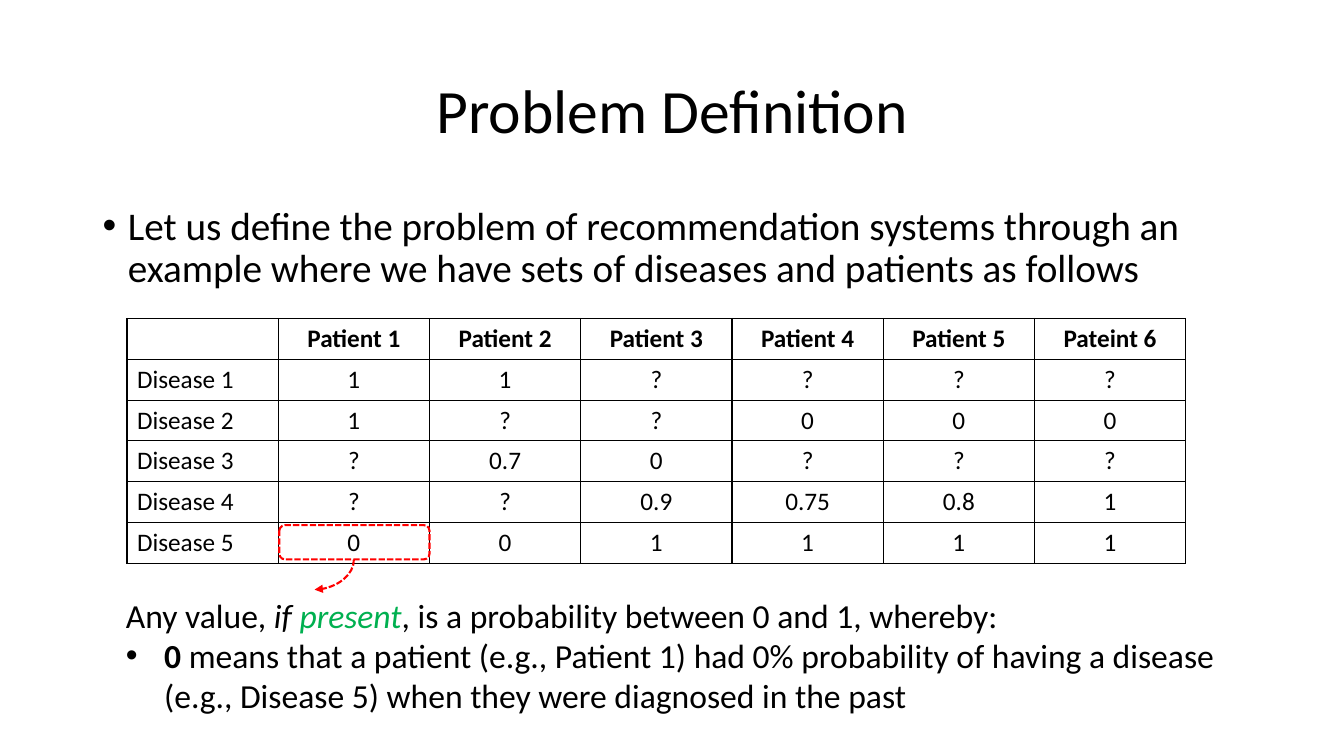
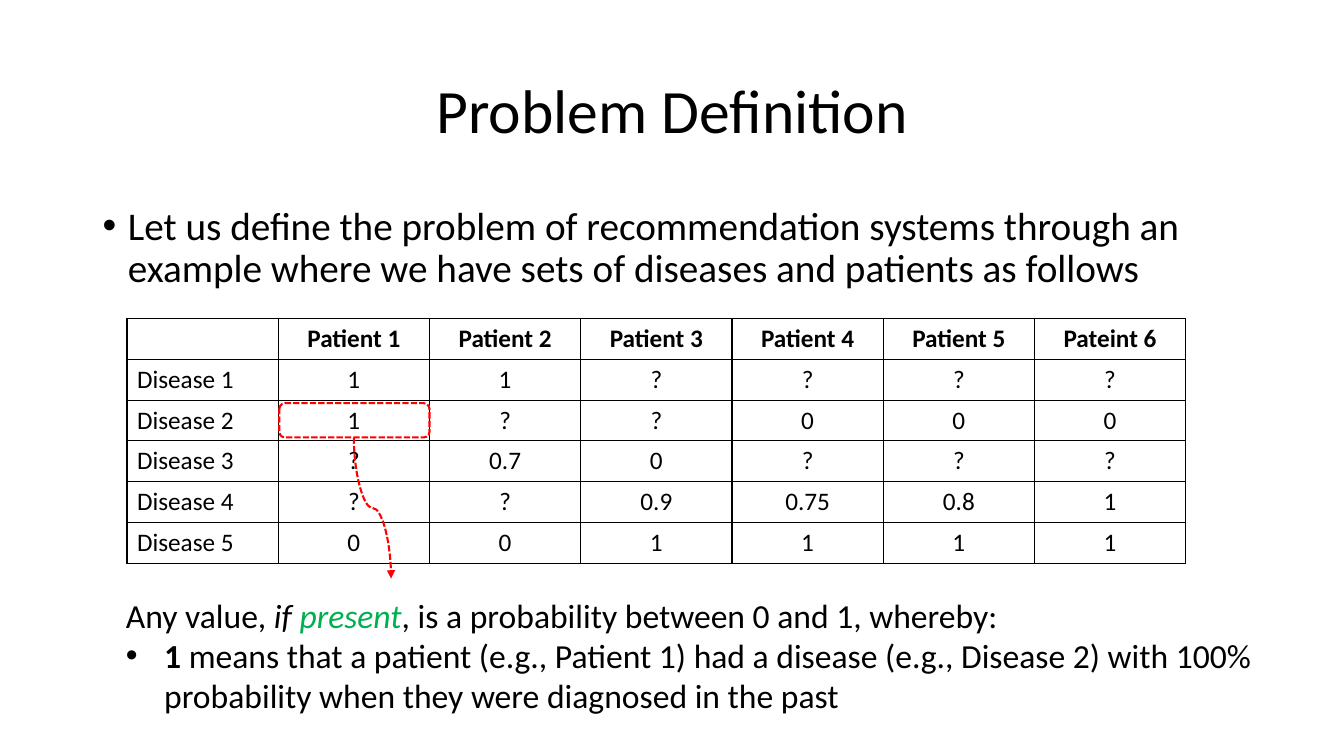
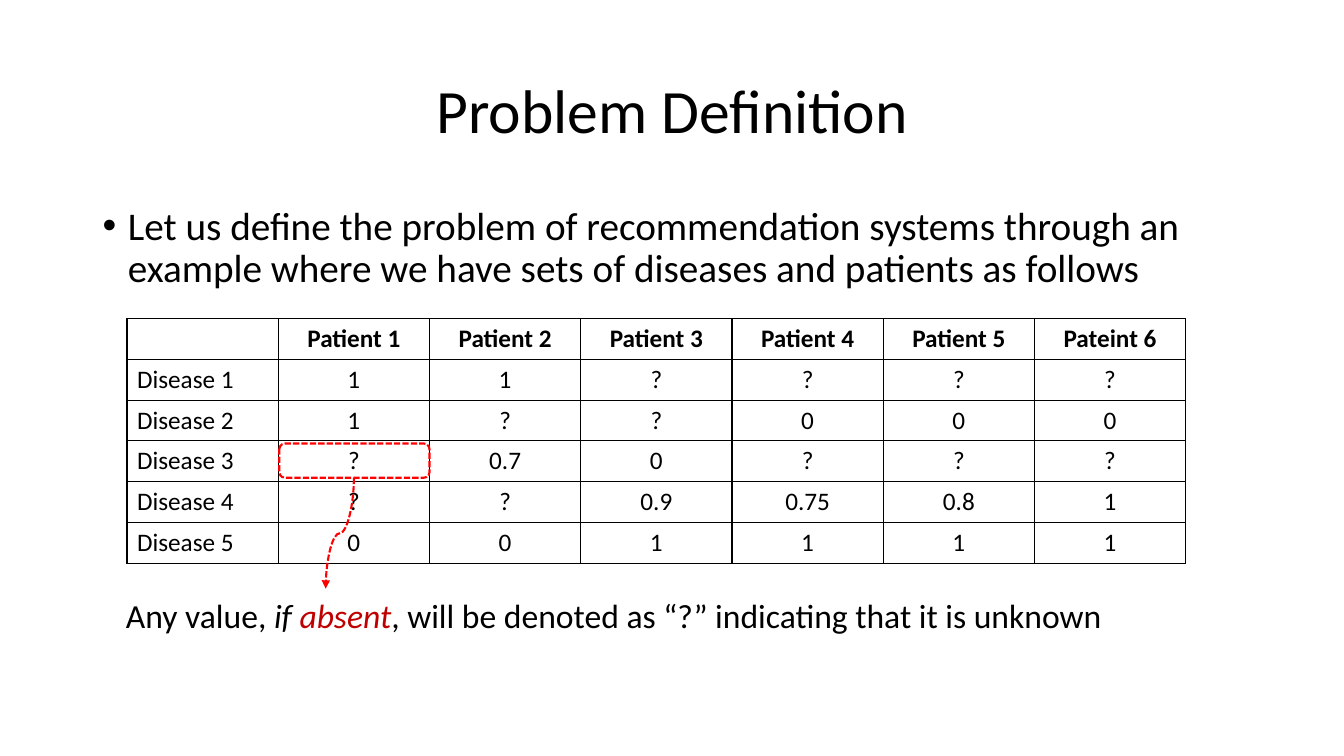
import pptx
import pptx.dml.color
import pptx.enum.dml
import pptx.enum.shapes
import pptx.enum.text
import pptx.oxml.ns
import pptx.util
from lxml import etree

SCALE = 9144
FONT = "Calibri"
COLORS = {"text": "000000", "present": "00B050", "absent": "C00000", "mark": "FF0000"}
TABLE_BOX = (126, 316, 1050, 243)
GRID = [
    ["", "Patient 1", "Patient 2", "Patient 3", "Patient 4", "Patient 5", "Pateint 6"],
    ["Disease 1", "1", "1", "?", "?", "?", "?"],
    ["Disease 2", "1", "?", "?", "0", "0", "0"],
    ["Disease 3", "?", "0.7", "0", "?", "?", "?"],
    ["Disease 4", "?", "?", "0.9", "0.75", "0.8", "1"],
    ["Disease 5", "0", "0", "1", "1", "1", "1"],
]
TITLE = "Problem Definition"
INTRO = ("Let us define the problem of recommendation systems through an example "
         "where we have sets of diseases and patients as follows")
PRESENT = [("Any value, ", {}), ("if ", {"italic": True}),
           ("present", {"italic": True, "color": "present"}),
           (", is a probability between 0 and 1, whereby:", {})]
ABSENT = [("Any value, ", {}), ("if ", {"italic": True}),
          ("absent", {"italic": True, "color": "absent"}),
          (", will be denoted as “?” indicating that it is unknown", {})]
ZERO = [("0", {"bold": True}),
        (" means that a patient (e.g., Patient 1) had 0% probability of having a disease "
         "\v(e.g., Disease 5) when they were diagnosed in the past", {})]
ONE = [("1", {"bold": True}),
       (" means that a patient (e.g., Patient 1) had a disease (e.g., Disease 2) with 100% "
        "\vprobability when they were diagnosed in the past", {})]
SLIDES = [
    {"row": 5, "tip": (312, 585), "bends": 2, "note": (115, 585, 1117, 131), "lines": [PRESENT, ZERO]},
    {"row": 2, "tip": (388, 574), "bends": 3, "note": (115, 585, 1154, 131), "lines": [PRESENT, ONE]},
    {"row": 3, "tip": (323, 584), "bends": 3, "note": (115, 585, 1005, 50), "lines": [ABSENT]},
]


def px(n):
    """Turn px into EMU."""
    return pptx.util.Emu(int(n * SCALE))


def rgb(name):
    """Look up a named colour."""
    return pptx.dml.color.RGBColor.from_string(COLORS[name])


def add(parent, tag, **attrs):
    """Append a DrawingML element."""
    return etree.SubElement(parent, pptx.oxml.ns.qn(tag), attrs)


def style(p, size, bold=None, center=False):
    """Set the font and alignment of a paragraph."""
    p.font.name = FONT
    p.font.size = pptx.util.Pt(size)
    p.font.bold = bold
    p.font.color.rgb = rgb("text")
    if center:
        p.alignment = pptx.enum.text.PP_ALIGN.CENTER


def bullet(p, indent):
    """Give a paragraph a hanging bullet."""
    pPr = p._p.get_or_add_pPr()
    pPr.set("marL", str(px(indent)))
    pPr.set("indent", str(-px(indent)))
    add(pPr, "a:buFont", typeface="Arial")
    add(pPr, "a:buChar", char="•")


def text_box(slide, box, wrap=True):
    """Add an empty text box and return its text frame."""
    tf = slide.shapes.add_textbox(*map(px, box)).text_frame
    tf.word_wrap = wrap
    return tf


def add_title(slide, box):
    """Place the centred slide title."""
    tf = text_box(slide, box)
    tf.vertical_anchor = pptx.enum.text.MSO_ANCHOR.MIDDLE
    p = tf.paragraphs[0]
    p.text = TITLE
    p.line_spacing = 0.9
    style(p, 44, center=True)


def add_intro(slide, box):
    """Place the bulleted introduction."""
    p = text_box(slide, box).paragraphs[0]
    p.text = INTRO
    bullet(p, 25)
    p.line_spacing = 0.9
    p.space_before = pptx.util.Pt(10)
    style(p, 28)


def set_borders(cell):
    """Draw thin lines on all four sides of a cell."""
    tcPr = cell._tc.get_or_add_tcPr()
    for i, side in enumerate(("a:lnL", "a:lnR", "a:lnT", "a:lnB")):
        ln = add(tcPr, side, w=str(pptx.util.Pt(1)))
        add(add(ln, "a:solidFill"), "a:srgbClr", val=COLORS["text"])
        tcPr.insert(i, ln)


def add_grid(slide, box):
    """Place the table of diseases and patients."""
    table = slide.shapes.add_table(len(GRID), len(GRID[0]), *map(px, box)).table
    table.first_row = table.horz_banding = False
    for i, row in enumerate(GRID):
        for j, value in enumerate(row):
            cell = table.cell(i, j)
            cell.text = value
            cell.fill.background()
            set_borders(cell)
            style(cell.text_frame.paragraphs[0], 18, bold=i == 0, center=j > 0)


def dash(line):
    """Make a line red and dashed."""
    line.color.rgb = rgb("mark")
    line.width = pptx.util.Pt(1.5)
    line.dash_style = pptx.enum.dml.MSO_LINE.SQUARE_DOT


def add_curve(slide, start, tip, bends):
    """Draw a curved arrow that leaves its start downwards."""
    (x1, y1), (x2, y2) = start, tip
    cx, cy, w, h = (x1 + x2) / 2, (y1 + y2) / 2, abs(x2 - x1), y2 - y1
    c = slide.shapes.add_connector(pptx.enum.shapes.MSO_CONNECTOR.CURVE,
                                   px(cx - h / 2), px(cy - w / 2), px(cx + h / 2), px(cy + w / 2))
    dash(c.line)
    add(c.line._get_or_add_ln(), "a:tailEnd", type="triangle")
    spPr = c._element.spPr
    add(spPr, "a:effectLst")
    spPr.find(pptx.oxml.ns.qn("a:prstGeom")).set("prst", f"curvedConnector{bends}")
    xfrm = spPr.find(pptx.oxml.ns.qn("a:xfrm"))
    xfrm.set("rot", str((90 if x2 < x1 else 270) * 60000))
    if x2 > x1:
        xfrm.set("flipH", "1")


def add_highlight(slide, box, row, tip, bends):
    """Frame the first patient's cell in a table row and point from it to the note."""
    left, top, width, height = box
    x = left + width // len(GRID[0]) + 1
    y = top + height * row // len(GRID) + 3
    sp = slide.shapes.add_shape(pptx.enum.shapes.MSO_SHAPE.ROUNDED_RECTANGLE,
                                px(x), px(y), px(149), px(34))
    sp.shadow.inherit = False
    sp.fill.background()
    dash(sp.line)
    add_curve(slide, (x + 74, y + 34), tip, bends)


def add_note(slide, box, lines):
    """Place the explanation, with bullets after its first line."""
    tf = text_box(slide, box, wrap=False)
    tf.auto_size = pptx.enum.text.MSO_AUTO_SIZE.SHAPE_TO_FIT_TEXT
    for i, runs in enumerate(lines):
        p = tf.add_paragraph() if i else tf.paragraphs[0]
        if i:
            bullet(p, 38)
        style(p, 24)
        for text, look in runs:
            for k, part in enumerate(text.split("\v")):
                if k:
                    p.add_line_break()
                r = p.add_run()
                r.text = part
                r.font.bold = look.get("bold")
                r.font.italic = look.get("italic")
                if "color" in look:
                    r.font.color.rgb = rgb(look["color"])


def add_slide(prs, row, tip, bends, note, lines):
    """Build one slide of the series."""
    slide = prs.slides.add_slide(prs.slide_layouts[6])
    add_title(slide, (92, 40, 1150, 145))
    add_intro(slide, (92, 200, 1172, 476))
    add_grid(slide, TABLE_BOX)
    add_highlight(slide, TABLE_BOX, row, tip, bends)
    add_note(slide, note, lines)


def main():
    """Build and save the presentation."""
    prs = pptx.Presentation()
    prs.slide_width, prs.slide_height = px(1333), px(750)
    for content in SLIDES:
        add_slide(prs, **content)
    prs.save("out.pptx")


if __name__ == "__main__":
    main()
